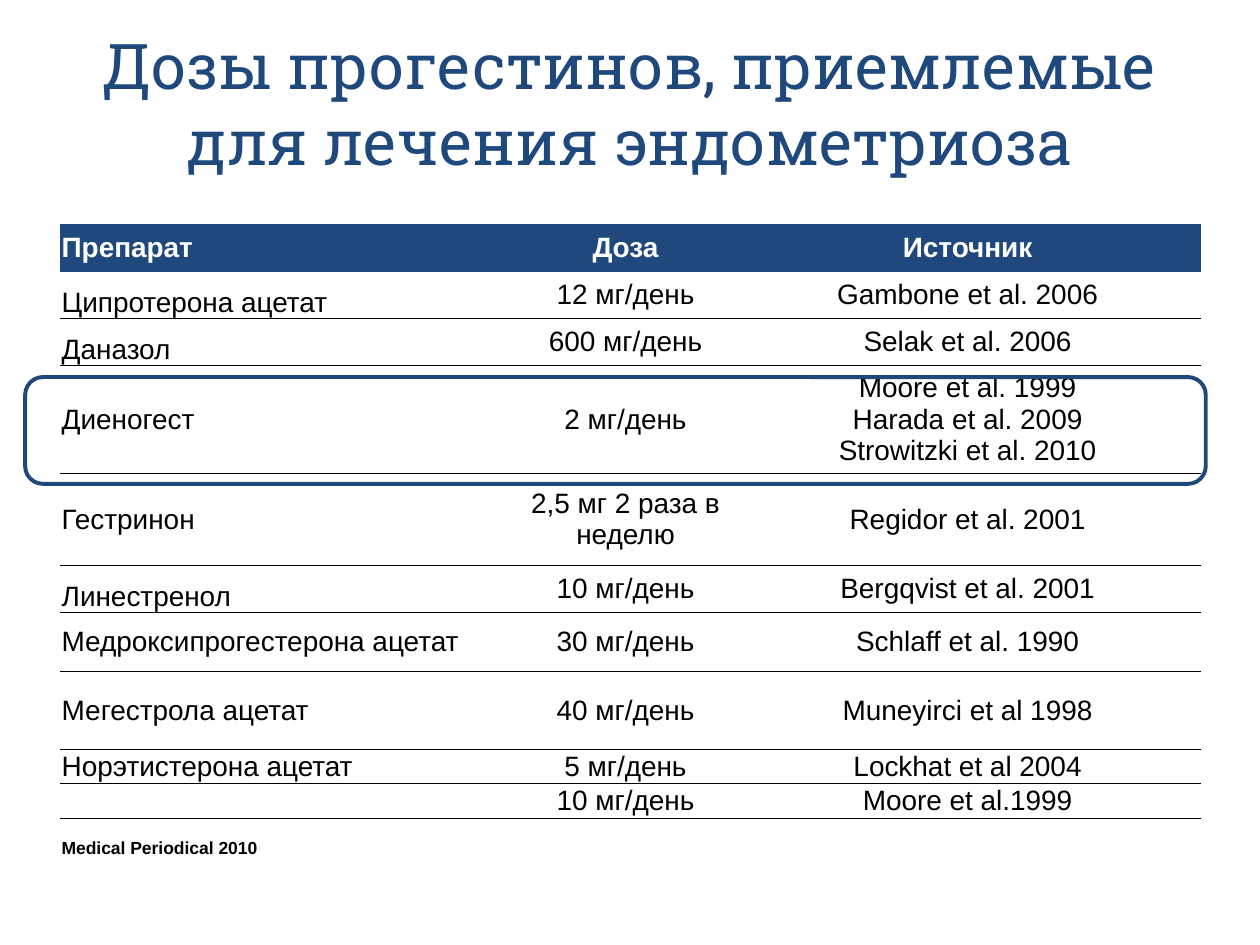
from lxml.etree import SubElement
from pptx import Presentation
from pptx.dml.color import RGBColor
from pptx.enum.shapes import MSO_SHAPE
from pptx.enum.text import MSO_ANCHOR, PP_ALIGN
from pptx.oxml.ns import qn
from pptx.util import Inches, Pt

WIDTH, HEIGHT = 10, 7.5
NAVY, BLACK, WHITE = "1F497D", "000000", "FFFFFF"
COLUMNS = [3.62, 1.73, 3.7]
ROWS = [0.38, 0.32, 0.35, 0.86, 0.73, 0.32, 0.47, 0.62, 0.27, 0.28]
LOOSE_DRUGS = ("Ципротерона ацетат", "Даназол", "Линестренол")
DOSES = [
    ("Препарат", "Доза", "Источник"),
    ("Ципротерона ацетат", "12 мг/день", "Gambone et al. 2006"),
    ("Даназол", "600 мг/день", "Selak et al. 2006"),
    ("Диеногест", "2 мг/день",
     "Moore et al. 1999\nHarada et al. 2009\nStrowitzki et al. 2010"),
    ("Гестринон", "2,5 мг 2 раза в неделю", "Regidor et al. 2001"),
    ("Линестренол", "10 мг/день", "Bergqvist et al. 2001"),
    ("Медроксипрогестерона ацетат", "30 мг/день", "Schlaff et al. 1990"),
    ("Мегестрола ацетат", "40 мг/день", "Muneyirci et al 1998"),
    ("Норэтистерона ацетат", "5 мг/день", "Lockhat et al 2004"),
    ("", "10 мг/день", "Moore et al.1999"),
]


def color(value):
    """Turn a hex string into a colour."""
    return RGBColor.from_string(value)


def share(left, top, width, height):
    """Turn shares of the slide's size into a box of lengths."""
    return [Inches(part * size) for part, size in
            zip((left, top, width, height), (WIDTH, HEIGHT) * 2)]


def apply(target, values):
    """Set attributes of an object from a dict."""
    for name, value in values.items():
        setattr(target, name, value)


def write(frame, text, size, ink, font="Arial", bold=False, **layout):
    """Write each line of the text as a formatted paragraph."""
    for index, line in enumerate(text.split("\n")):
        para = frame.add_paragraph() if index else frame.paragraphs[0]
        apply(para, layout)
        span = para.add_run()
        span.text = line
        apply(span.font, {"size": Pt(size), "name": font, "bold": bold})
        span.font.color.rgb = color(ink)


def rule(cell, side, ink):
    """Draw one side of a cell, or hide it when no colour is given."""
    line = SubElement(cell._tc.get_or_add_tcPr(), qn(f"a:ln{side}"), w=str(Pt(0.5)))
    if ink:
        fill = SubElement(line, qn("a:solidFill"))
        SubElement(fill, qn("a:srgbClr"), val=ink)
    else:
        SubElement(line, qn("a:noFill"))


def add_title(page, box, text):
    """Place the slide title in its placeholder."""
    title = page.shapes.title
    apply(title, dict(zip(("left", "top", "width", "height"), box)))
    apply(title.text_frame, {"vertical_anchor": MSO_ANCHOR.MIDDLE, "word_wrap": True})
    write(title.text_frame, text, 36, NAVY, "Roboto Slab", alignment=PP_ALIGN.CENTER)


def fill_cell(cell, text, row, column):
    """Format one cell of the dose table by its row and column."""
    apply(cell, {"margin_left": Inches(0.01), "margin_right": Inches(0.01),
                 "margin_top": 0, "margin_bottom": 0,
                 "vertical_anchor": MSO_ANCHOR.MIDDLE})
    borders = {"L": None, "R": None, "T": BLACK if row > 1 else None,
               "B": BLACK if row else None}
    for side, ink in borders.items():
        rule(cell, side, ink)
    cell.fill.solid()
    cell.fill.fore_color.rgb = color(WHITE if row else NAVY)
    layout = {"alignment": PP_ALIGN.CENTER if column else PP_ALIGN.LEFT}
    if text in LOOSE_DRUGS:
        layout["line_spacing"] = 1.5
    write(cell.text_frame, text, 16, BLACK if row else WHITE, bold=not row, **layout)


def add_doses(page, box):
    """Place the table of doses and sources."""
    table = page.shapes.add_table(len(ROWS), len(COLUMNS), *box).table
    table.horz_banding = False
    for column, width in zip(table.columns, COLUMNS):
        column.width = Inches(width)
    for row, height in zip(table.rows, ROWS):
        row.height = Inches(height)
    for row, record in enumerate(DOSES):
        for column, text in enumerate(record):
            fill_cell(table.cell(row, column), text, row, column)


def add_highlight(page, box):
    """Place the rounded outline around the highlighted drug."""
    frame = page.shapes.add_shape(MSO_SHAPE.ROUNDED_RECTANGLE, *box)
    frame.shadow.inherit = False
    frame.fill.background()
    frame.line.color.rgb = color(NAVY)
    frame.line.width = Pt(2.25)


def add_reference(page, box, text):
    """Place the source note under the table."""
    frame = page.shapes.add_textbox(*box).text_frame
    frame.word_wrap = True
    write(frame, text, 10, BLACK, bold=True)


def main():
    """Build the slide and save the deck."""
    deck = Presentation()
    apply(deck, {"slide_width": Inches(WIDTH), "slide_height": Inches(HEIGHT)})
    page = deck.slides.add_slide(deck.slide_layouts[5])
    add_title(page, share(0.067, 0.012, 0.866, 0.193),
              "Дозы прогестинов, приемлемые для лечения эндометриоза")
    add_doses(page, share(0.048, 0.237, 0.906, 0.639))
    add_reference(page, share(0.039, 0.879, 0.179, 0.036), "Medical Periodical 2010")
    add_highlight(page, share(0.02, 0.399, 0.937, 0.113))
    deck.save("out.pptx")


if __name__ == "__main__":
    main()
